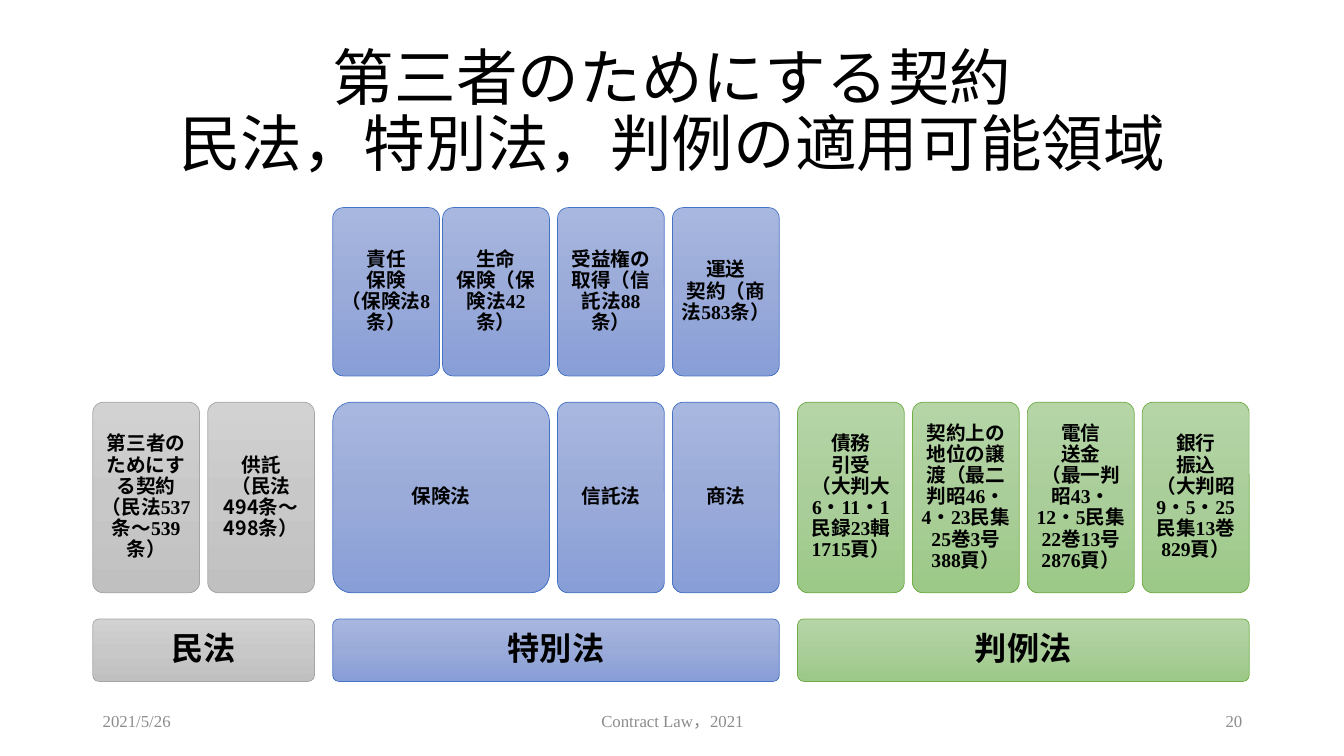
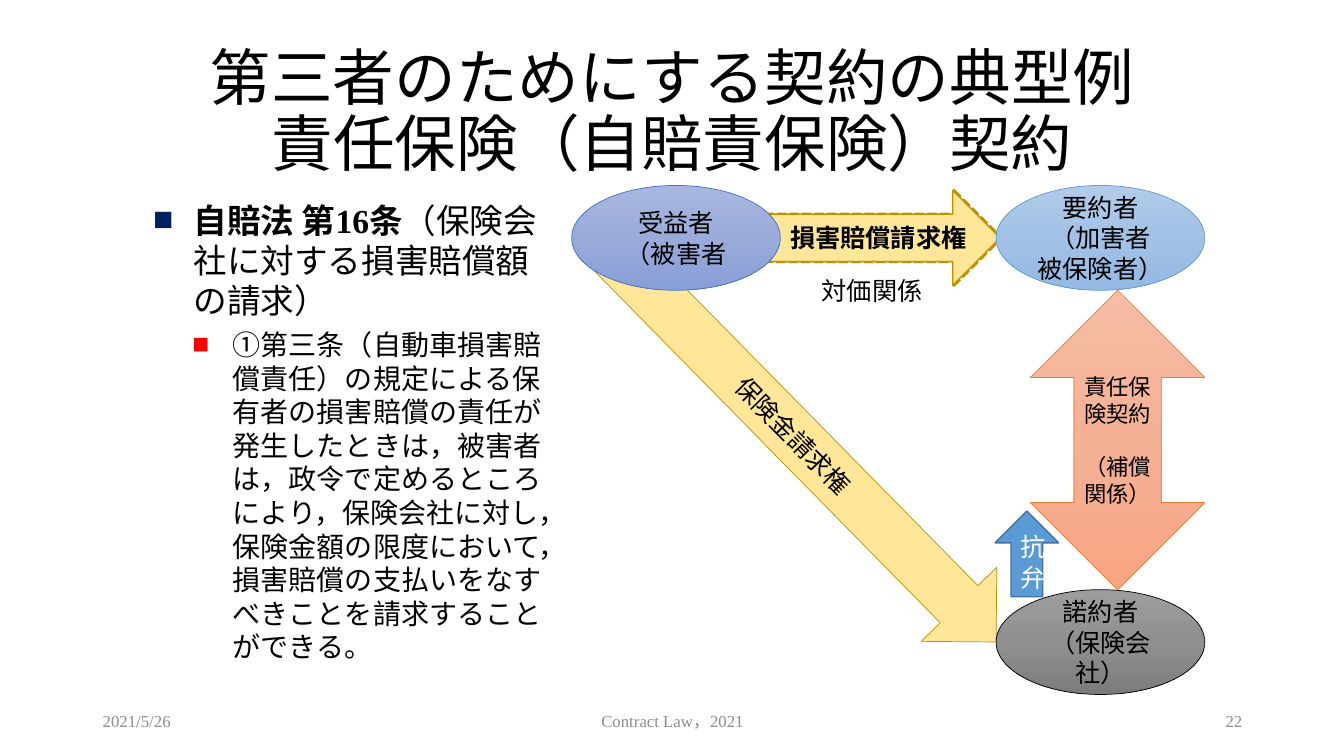
from copy import deepcopy

from lxml.etree import SubElement
from pptx import Presentation
from pptx.dml.color import RGBColor
from pptx.enum.dml import MSO_LINE
from pptx.enum.shapes import MSO_SHAPE
from pptx.enum.text import MSO_ANCHOR, PP_ALIGN
from pptx.oxml.ns import qn
from pptx.util import Inches, Pt

SERIF = "Times New Roman"
GOTHIC = "Noto Sans CJK JP"
BLACK, WHITE, FOOTER_GRAY = "000000", "FFFFFF", "8C8C8C"
SAND, GOLD = "FFE699", "BF9000"
GRAY = (("D2D2D2", "C8C8C8", "C0C0C0"), "A5A5A5")
BLUE = (("A8B7DF", "9AABD9", "889ED7"), "4472C4")
GREEN = (("B5D5A7", "AACE9A", "9CC987"), "70AD47")
SKY = (("B1CBE9", "A3C1E5", "93B9E4"), "5B9BD5")
ORANGE = (("F7BDA5", "F5B196", "F8A582"), "ED7D31")
CHARCOAL = (("9D9D9D", "909090", "7C7C7C"), BLACK)

FAMILIES = [
    ("民法", GRAY, [
        ("第三者のためにする契約\v（民法537条～539条）", []),
        ("供託\v（民法494条～498条）", []),
    ]),
    ("特別法", BLUE, [
        ("保険法", ["責任\v保険\v（保険法8条）", "生命\v保険（保険法42条）"]),
        ("信託法", ["受益権の取得（信託法88条）"]),
        ("商法", ["運送\v契約（商法583条）"]),
    ]),
    ("判例法", GREEN, [
        ("債務\v引受\v（大判大6・11・1民録23輯1715頁）", []),
        ("契約上の地位の譲渡（最二判昭46・4・23民集25巻3号388頁）", []),
        ("電信\v送金\v（最一判昭43・12・5民集22巻13号2876頁）", []),
        ("銀行\v振込\v（大判昭9・5・25民集13巻829頁）", []),
    ]),
]
CELL_WIDTH, LAW_GAP, CASE_GAP, FAMILY_GAP = 1.06, 0.08, 0.03, 0.18

PARTIES = [
    (5.67, 1.84, "受益者\n（被害者", BLUE),
    (9.88, 1.84, "要約者\n（加害者\v被保険者）", SKY),
    (9.88, 5.85, "諾約者\n（保険会社）", CHARCOAL),
]
ARTICLE = "自賠法 第16条"
ARTICLE_TOPIC = "（保険会社に対する損害賠償額の請求）"
CLAUSE = (
    "①第三条（自動車損害賠償責任）の規定による保有者の損害賠償の責任が"
    "発生したときは，被害者は，政令で定めるところにより，保険会社に対し，"
    "保険金額の限度において，損害賠償の支払いをなすべきことを請求することができる。"
)


def rgb(value):
    """Turn a hex string into a colour."""
    return RGBColor.from_string(value)


def format_run(run, size, color=BLACK, bold=False, font=SERIF):
    """Give a run its font, size and colour."""
    run.font.name = font
    run.font.size = Pt(size)
    run.font.bold = bold
    run.font.color.rgb = rgb(color)
    SubElement(run.font._element, qn("a:ea"), typeface=GOTHIC)


def write(frame, text, size, align=PP_ALIGN.CENTER, anchor=MSO_ANCHOR.MIDDLE,
          spacing=None, **style):
    """Fill a text frame with evenly formatted text."""
    frame.word_wrap = True
    frame.vertical_anchor = anchor
    frame.text = text
    for paragraph in frame.paragraphs:
        paragraph.alignment = align
        paragraph.line_spacing = spacing
        for run in paragraph.runs:
            format_run(run, size, **style)
        for line_break in paragraph._p.findall(qn("a:br")):
            line_break.append(deepcopy(paragraph.runs[0].font._element))


def add_label(slide, box, text, size, **style):
    """Add a text box and return its frame."""
    frame = slide.shapes.add_textbox(*map(Inches, box)).text_frame
    write(frame, text, size, **style)
    return frame


def fill_gradient(shape, colors):
    """Fill a shape with a three-stop gradient from top to bottom."""
    shape.fill.gradient()
    shape.fill.gradient_angle = 270
    stop_list = shape._element.spPr.find(qn("a:gradFill")).find(qn("a:gsLst"))
    stop_list.append(deepcopy(stop_list[-1]))
    for stop, position, color in zip(shape.fill.gradient_stops, (0, 0.5, 1), colors):
        stop.position = position
        stop.color.rgb = rgb(color)


def add_figure(slide, kind, box, fill, outline, weight=0.5):
    """Add a preset shape with a gradient, a plain fill or none."""
    figure = slide.shapes.add_shape(kind, *map(Inches, box))
    figure.shadow.inherit = False
    if fill is None:
        figure.fill.background()
    elif isinstance(fill, tuple):
        fill_gradient(figure, fill)
    else:
        figure.fill.solid()
        figure.fill.fore_color.rgb = rgb(fill)
    figure.line.color.rgb = rgb(outline)
    figure.line.width = Pt(weight)
    return figure


def add_card(slide, box, text, palette, size=14, inset=0.06, font=SERIF):
    """Add a rounded card with bold text."""
    card = add_figure(slide, MSO_SHAPE.ROUNDED_RECTANGLE, box, *palette)
    card.adjustments[0] = 0.1
    frame = card.text_frame
    frame.margin_left = frame.margin_right = Inches(inset)
    frame.margin_top = frame.margin_bottom = Inches(inset)
    write(frame, text, size, spacing=0.9, bold=True, font=font)


def add_bullet(paragraph, indent, color, space):
    """Give a paragraph a square bullet and a hanging indent."""
    paragraph.space_before = Pt(space)
    properties = paragraph._p.get_or_add_pPr()
    properties.set("marL", str(Inches(indent)))
    properties.set("indent", str(Inches(-0.4)))
    bullet_color = SubElement(properties, qn("a:buClr"))
    SubElement(bullet_color, qn("a:srgbClr"), val=color)
    SubElement(properties, qn("a:buFont"), typeface=SERIF)
    SubElement(properties, qn("a:buChar"), char="■")


def start_slide(deck, title, number):
    """Add a blank slide with its title and footers."""
    slide = deck.slides.add_slide(deck.slide_layouts[6])
    add_label(slide, (0.92, 0.4, 11.5, 1.45), title, 44, spacing=0.9, font=GOTHIC)
    footers = [
        (0.92, 3, "2021/5/26", PP_ALIGN.LEFT),
        (4.42, 4.5, "Contract Law，2021", PP_ALIGN.CENTER),
        (9.42, 3, number, PP_ALIGN.RIGHT),
    ]
    for left, width, text, align in footers:
        add_label(slide, (left, 6.95, width, 0.4), text, 12, align=align,
                  color=FOOTER_GRAY)
    return slide


def add_family(slide, left, name, palette, laws):
    """Stack a family's cases and laws on its base and return its right edge."""
    law_left = left
    for law, cases in laws:
        columns = max(1, len(cases))
        width = columns * CELL_WIDTH + (columns - 1) * CASE_GAP
        font = GOTHIC if law.startswith("供託") else SERIF
        add_card(slide, (law_left, 3.99, width, 1.89), law, palette, font=font)
        for index, case in enumerate(cases):
            case_left = law_left + index * (CELL_WIDTH + CASE_GAP)
            add_card(slide, (case_left, 2.06, CELL_WIDTH, 1.67), case, palette)
        law_left += width + LAW_GAP
    right = law_left - LAW_GAP
    add_card(slide, (left, 6.14, right - left, 0.62), name, palette, 23, 0.1)
    return right


def build_scope(deck):
    """Build the slide on the fields of application."""
    slide = start_slide(
        deck, "第三者のためにする契約\v民法，特別法，判例の適用可能領域", "20")
    left = 0.92
    for name, palette, laws in FAMILIES:
        left = add_family(slide, left, name, palette, laws) + FAMILY_GAP


def add_article(slide):
    """Add the bulleted article of the law."""
    frame = add_label(slide, (1.42, 1.93, 4.25, 4.67), f"{ARTICLE}\n{CLAUSE}", 20,
                      align=PP_ALIGN.LEFT, anchor=MSO_ANCHOR.TOP)
    article, clause = frame.paragraphs
    article.runs[0].font.size = Pt(24)
    article.runs[0].font.bold = True
    topic = article.add_run()
    topic.text = ARTICLE_TOPIC
    format_run(topic, 24)
    clause.level = 1
    add_bullet(article, 0.4, "002060", 10)
    add_bullet(clause, 0.79, "FF0000", 5)


def build_example(deck):
    """Build the slide on the liability insurance contract."""
    slide = start_slide(
        deck, "第三者のためにする契約の典型例\v責任保険（自賠責保険）契約", "22")
    dashed = add_figure(slide, MSO_SHAPE.RIGHT_ARROW, (7.58, 1.89, 2.35, 0.94),
                        None, GOLD, 2.25)
    dashed.line.dash_style = MSO_LINE.SQUARE_DOT
    damages = add_figure(slide, MSO_SHAPE.RIGHT_ARROW, (7.57, 1.89, 2.35, 0.94),
                         SAND, GOLD, 1)
    write(damages.text_frame, "損害賠償請求権", 18, align=PP_ALIGN.RIGHT, bold=True)
    add_article(slide)

    contract = add_figure(slide, MSO_SHAPE.UP_DOWN_ARROW, (10.22, 2.88, 1.73, 2.97),
                          *ORANGE)
    write(contract.text_frame, "責任保険契約\n（補償\n関係）", 16)
    contract.text_frame.paragraphs[1].space_before = Pt(19)
    claim = add_figure(slide, MSO_SHAPE.RIGHT_ARROW, (5.22, 3.89, 5.48, 1.05),
                       SAND, GOLD)
    claim.rotation = 45.5
    write(claim.text_frame, "保険金請求権", 18)

    for left, top, text, palette in PARTIES:
        party = add_figure(slide, MSO_SHAPE.OVAL, (left, top, 2.07, 1.04), *palette)
        write(party.text_frame, text, 18)
    add_label(slide, (8.03, 2.68, 1.24, 0.4), "対価関係", 18, anchor=MSO_ANCHOR.TOP)
    defence = add_figure(slide, MSO_SHAPE.UP_ARROW, (9.87, 5.07, 0.63, 0.85),
                         "5B9BD5", "43739E", 1)
    write(defence.text_frame, "抗弁", 18, color=WHITE)


def main():
    """Build and save the presentation."""
    deck = Presentation()
    deck.slide_width, deck.slide_height = Inches(13.33), Inches(7.5)
    build_scope(deck)
    build_example(deck)
    deck.save("out.pptx")


if __name__ == "__main__":
    main()
